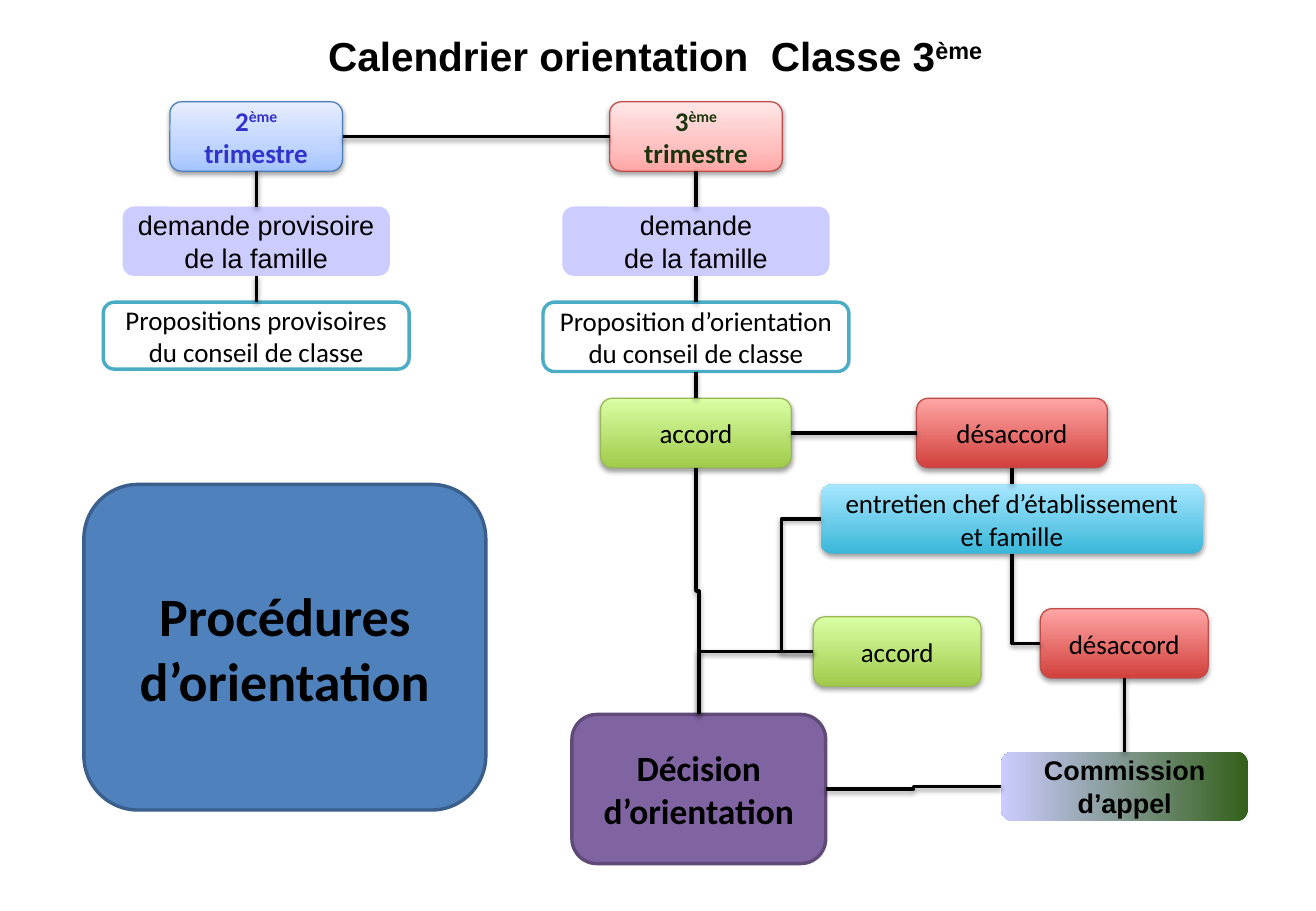
from dataclasses import dataclass, field

from lxml import etree
from pptx import Presentation
from pptx.dml.color import RGBColor
from pptx.enum.shapes import MSO_CONNECTOR, MSO_SHAPE
from pptx.enum.text import MSO_ANCHOR, PP_ALIGN
from pptx.oxml.ns import qn
from pptx.util import Cm, Pt

ROUNDED = MSO_SHAPE.ROUNDED_RECTANGLE
STRAIGHT, ELBOW = MSO_CONNECTOR.STRAIGHT, MSO_CONNECTOR.ELBOW
MIDDLE, CENTER = MSO_ANCHOR.MIDDLE, PP_ALIGN.CENTER
TOP, LEFT, BOTTOM, RIGHT = range(4)


@dataclass(frozen=True)
class Style:
    stops: tuple
    line: str = ""
    width: float = 0.75
    angle: int = 90
    shadow: bool = False
    font: str = "Calibri"
    size: int = 16
    bold: bool = False
    color: str = "000000"


@dataclass(frozen=True)
class Theme:
    ink: str = "000000"
    title: Style = Style((), font="Arial", size=24, bold=True)
    connector_width: float = 2
    boxes: dict = field(default_factory=lambda: {
        "term2": Style(((0, "A4C4FF"), (35, "BFD4FF"), (100, "E6EEFF")),
                       "4B7EBC", shadow=True, bold=True, color="3333CC"),
        "term3": Style(((0, "FFA6A5"), (35, "FFC0BF"), (100, "FFE7E7")),
                       "BF4C48", shadow=True, bold=True, color="1C340E"),
        "request": Style(((0, "CCCCFF"),), font="Arial"),
        "proposal": Style(((0, "FFFFFF"),), "4BACC6", 2),
        "heading": Style(((0, "4F81BD"),), "3A5F8C", 2, size=32, bold=True),
        "decision": Style(((0, "8064A2"),), "5F4A78", 2, size=21, bold=True),
        "agree": Style(((0, "A0CA4A"), (100, "DAFFA5")), "98B955", shadow=True),
        "disagree": Style(((0, "D1403C"), (100, "FFA6A5")), "BF4C48", shadow=True),
        "meeting": Style(((0, "39B7D8"), (100, "A7E6FF")), shadow=True),
        "appeal": Style(((0, "33601A"), (100, "CCCCFF")), angle=180,
                        font="Arial", bold=True),
    })


THEME = Theme()
TERM_W, REQUEST_W, PROPOSAL_W, CHOICE_W, OUTCOME_W = 3.61, 5.59, 6.4, 3.99, 3.51
BOX_H = 1.45
COL_2, COL_3, COL_MEETING = 5.36, 14.56, 21.17
ROW_TERM, ROW_REQUEST, ROW_PROPOSAL, ROW_CHOICE, ROW_MEETING = (
    2.13, 4.32, 6.32, 8.33, 10.13)

BOXES = {
    "term2": ("term2", COL_2, ROW_TERM, TERM_W, BOX_H, "2^ème\ntrimestre"),
    "request2": ("request", COL_2, ROW_REQUEST, REQUEST_W, BOX_H,
                 "demande provisoire\nde la famille"),
    "proposal2": ("proposal", COL_2, ROW_PROPOSAL, PROPOSAL_W, 1.4,
                  "Propositions provisoires\ndu conseil de classe"),
    "heading": ("heading", 5.96, ROW_MEETING, 8.41, 6.81,
                "Procédures\nd’orientation"),
    "term3": ("term3", COL_3, ROW_TERM, TERM_W, BOX_H, "3^ème\ntrimestre"),
    "request3": ("request", COL_3, ROW_REQUEST, REQUEST_W, BOX_H,
                 "demande\nde la famille"),
    "proposal3": ("proposal", COL_3, ROW_PROPOSAL, PROPOSAL_W, BOX_H,
                  "Proposition d’orientation\ndu conseil de classe"),
    "agree": ("agree", COL_3, ROW_CHOICE, CHOICE_W, BOX_H, "accord"),
    "disagree": ("disagree", COL_MEETING, ROW_CHOICE, CHOICE_W, BOX_H, "désaccord"),
    "decision": ("decision", 14.62, 14.94, 5.31, 3.12, "Décision\nd’orientation"),
    "meeting": ("meeting", COL_MEETING, ROW_MEETING, 8, BOX_H,
                "entretien chef d’établissement\net famille"),
    "appeal": ("appeal", 23.53, 15.72, 5.16, BOX_H, "Commission\nd’appel"),
    "agree_after": ("agree", 18.77, 12.9, OUTCOME_W, BOX_H, "accord"),
    "disagree_after": ("disagree", 23.52, 12.73, OUTCOME_W, BOX_H, "désaccord"),
}

LINKS = (
    ("term2", BOTTOM, "request2", TOP, "straight"),
    ("request2", BOTTOM, "proposal2", TOP, "straight"),
    ("term3", BOTTOM, "request3", TOP, "straight"),
    ("request3", BOTTOM, "proposal3", TOP, "straight"),
    ("proposal3", BOTTOM, "agree", TOP, "straight"),
    ("disagree", BOTTOM, "meeting", TOP, "straight"),
    ("disagree_after", BOTTOM, "appeal", TOP, "upright"),
    ("disagree_after", LEFT, "meeting", BOTTOM, "corner"),
    ("meeting", LEFT, "agree_after", LEFT, "loop"),
    ("agree", RIGHT, "disagree", LEFT, "straight"),
    ("agree", BOTTOM, "decision", TOP, "upright"),
    ("appeal", LEFT, "decision", RIGHT, "elbow"),
    ("agree_after", LEFT, "decision", TOP, "corner"),
    ("term2", RIGHT, "term3", LEFT, "straight"),
)


def rgb(value):
    return RGBColor.from_string(value)


def add_xml(parent, tag, **attributes):
    return etree.SubElement(parent, qn(tag), attributes)


def add_shadow(effects):
    shadow = add_xml(effects, "a:outerShdw", blurRad=str(Pt(3.1)), dist=str(Pt(1.6)),
                     dir="5400000", rotWithShape="0")
    color = add_xml(shadow, "a:srgbClr", val=THEME.ink)
    add_xml(color, "a:alpha", val="38000")


def write_text(tf, text, style):
    for i, line in enumerate(text.split("\n")):
        p = tf.paragraphs[0] if i == 0 else tf.add_paragraph()
        p.alignment = CENTER
        for j, part in enumerate(line.split("^")):
            r = p.add_run()
            r.text = part
            formats = {"name": style.font, "size": Pt(style.size), "bold": style.bold}
            for name, value in formats.items():
                setattr(r.font, name, value)
            r.font.color.rgb = rgb(style.color)
            if j:
                r.font._element.set("baseline", "30000")


def paint(sp, style):
    if len(style.stops) == 1:
        sp.fill.solid()
        sp.fill.fore_color.rgb = rgb(style.stops[0][1])
        return
    sp.fill.gradient()
    sp.fill.gradient_angle = style.angle
    stops = sp._element.spPr.find(".//" + qn("a:gsLst"))
    for stop in list(stops):
        stops.remove(stop)
    for position, color in style.stops:
        stop = add_xml(stops, "a:gs", pos=str(position * 1000))
        add_xml(stop, "a:srgbClr", val=color)


def add_box(s, kind, center, top, width, height, text):
    style = THEME.boxes[kind]
    sp = s.shapes.add_shape(ROUNDED, Cm(center - width / 2), Cm(top),
                            Cm(width), Cm(height))
    paint(sp, style)
    if style.line:
        sp.line.color.rgb = rgb(style.line)
        sp.line.width = Pt(style.width)
    else:
        sp.line.fill.background()
    sp.shadow.inherit = False
    if style.shadow:
        add_shadow(sp._element.spPr.find(qn("a:effectLst")))
    tf = sp.text_frame
    formats = {"margin_left": 0, "margin_top": 0, "margin_right": 0,
               "margin_bottom": 0, "vertical_anchor": MIDDLE, "word_wrap": False}
    for name, value in formats.items():
        setattr(tf, name, value)
    write_text(tf, text, style)
    return sp


def stand_upright(c):
    middle_x, middle_y = c.left + c.width // 2, c.top + c.height // 2
    c.width, c.height = c.height, c.width
    c.left, c.top = middle_x - c.width // 2, middle_y - c.height // 2
    xfrm = c._element.spPr.find(qn("a:xfrm"))
    xfrm.set("rot", "5400000")
    xfrm.set("flipV", "1")


def add_link(s, start, start_site, end, end_site, route):
    c = s.shapes.add_connector(STRAIGHT if route == "straight" else ELBOW, 0, 0, 0, 0)
    c.begin_connect(start, start_site)
    c.end_connect(end, end_site)
    c.line.color.rgb = rgb(THEME.ink)
    c.line.width = Pt(THEME.connector_width)
    spPr = c._element.spPr
    geometry = spPr.find(qn("a:prstGeom"))
    if route == "upright":
        stand_upright(c)
    elif route == "corner":
        geometry.set("prst", "bentConnector2")
    elif route == "loop":
        bend = round(Cm(0.82) / c.width * 100000)
        add_xml(geometry.find(qn("a:avLst")), "a:gd", name="adj1", fmla=f"val {bend}")
    add_shadow(add_xml(spPr, "a:effectLst"))


def add_title(s, text):
    tf = s.shapes.add_textbox(Cm(5.56), Cm(0.53), Cm(16.43), Cm(1.27)).text_frame
    tf.word_wrap = True
    write_text(tf, text, THEME.title)


def main():
    prs = Presentation()
    prs.slide_width, prs.slide_height = Cm(27.53), Cm(19.05)
    s = prs.slides.add_slide(prs.slide_layouts[6])
    boxes = {name: add_box(s, *box) for name, box in BOXES.items()}
    for start, start_site, end, end_site, route in LINKS:
        add_link(s, boxes[start], start_site, boxes[end], end_site, route)
    add_title(s, "Calendrier orientation  Classe 3^ème ")
    prs.save("out.pptx")


if __name__ == "__main__":
    main()
